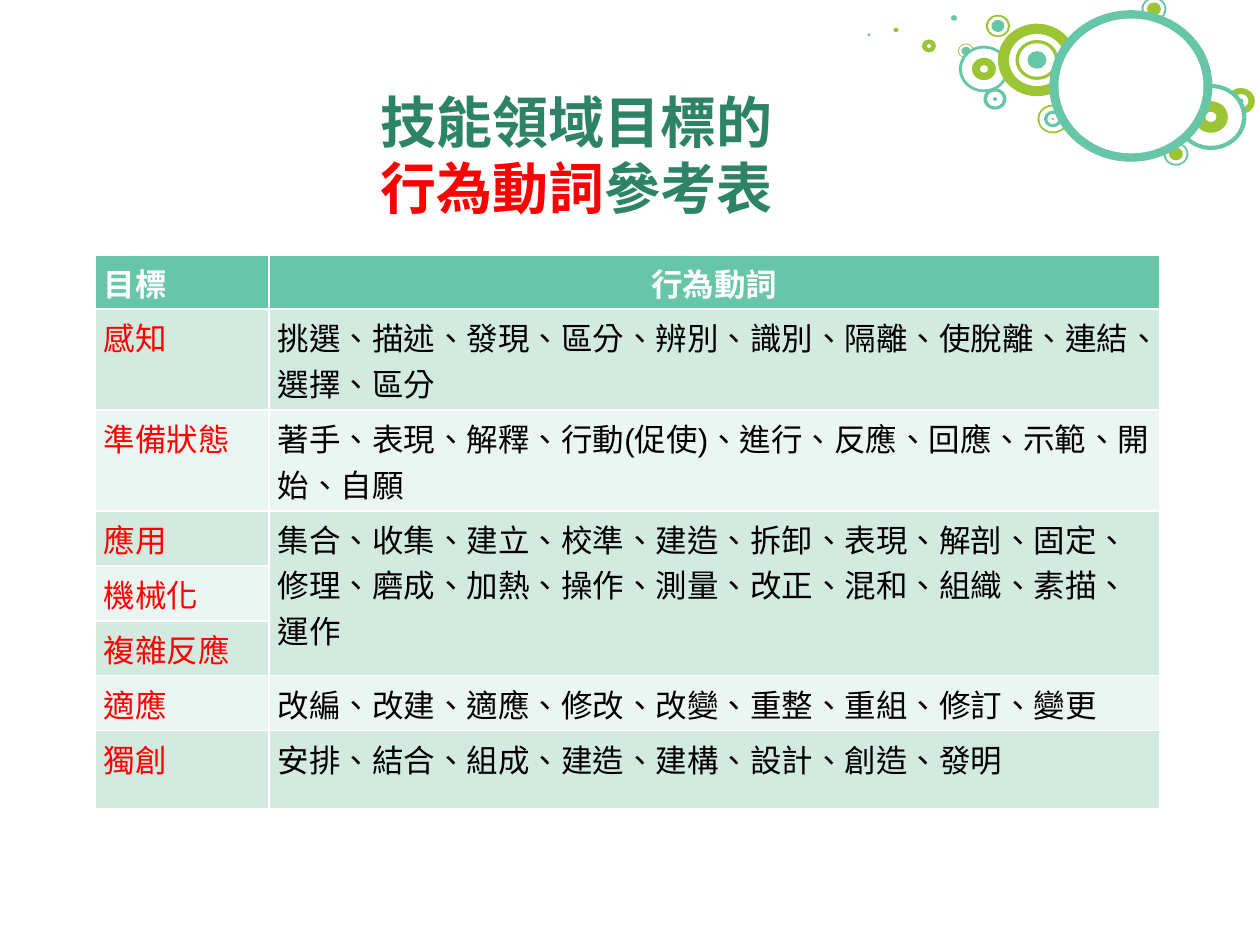
from pptx import Presentation
from pptx.dml.color import RGBColor
from pptx.enum.lang import MSO_LANGUAGE_ID
from pptx.enum.shapes import MSO_SHAPE
from pptx.enum.text import MSO_ANCHOR, PP_ALIGN
from pptx.oxml.ns import qn
from pptx.util import Pt

PX = 914400 // 126
OVAL = MSO_SHAPE.OVAL
CENTER, LEFT = PP_ALIGN.CENTER, PP_ALIGN.LEFT
MIDDLE = MSO_ANCHOR.MIDDLE
TAIWAN = MSO_LANGUAGE_ID.TRADITIONAL_CHINESE
CJK = "Noto Sans CJK SC"
COLORS = {
    "teal": "67C5A8", "lime": "9CC535", "white": "FFFFFF", "title": "2D8366",
    "red": "FF0000", "black": "000000", "dark": "D3EAE1", "light": "EBF5F1",
}

# Centre x, centre y, then the discs from the outside in: width, colour
RINGS = [
    (1154, 9, [(25, "teal"), (21, "white"), (14, "lime")]),
    (929, 46, [(14, "lime"), (4, "white")]),
    (954, 18, [(6, "teal")]),
    (896, 30, [(5, "lime")]),
    (869, 35, [(3, "teal")]),
    (966, 51, [(16, "lime"), (14, "white"), (9, "teal")]),
    (995, 99, [(23, "teal"), (16, "white"), (4, "teal")]),
    (984, 69, [(50, "teal"), (44, "white"), (24, "lime"), (8, "white")]),
    (1241, 101, [(28, "lime"), (15, "white"), (5, "teal")]),
    (1211, 117, [(71, "teal"), (62, "white"), (34, "lime"), (11, "white")]),
    (1053, 119, [(31, "lime"), (27, "white"), (18, "teal"), (11, "white"),
                 (2, "lime")]),
    (1037, 60, [(78, "lime"), (56, "white"), (43, "lime"), (36, "white"),
                (19, "teal")]),
    (1176, 154, [(25, "teal"), (21, "white"), (14, "lime")]),
    (998, 26, [(24, "lime"), (20, "white"), (13, "teal")]),
    (1131, 86, [(163, "teal"), (145, "white")]),
]
RATIO = 0.93

# Row height, goal, verbs (None joins the cell above)
ROWS = [
    (54, "目標", "行為動詞"),
    (101, "感知", "挑選、描述、發現、區分、辨別、識別、隔離、使脫離、連結、選擇、區分"),
    (101, "準備狀態", "著手、表現、解釋、行動(促使)、進行、反應、回應、示範、開始、自願"),
    (55, "應用", "集合、收集、建立、校準、建造、拆卸、表現、解剖、固定、"
                "修理、磨成、加熱、操作、測量、改正、混和、組織、素描、運作"),
    (55, "機械化", None),
    (55, "複雜反應", None),
    (55, "適應", "改編、改建、適應、修改、改變、重整、重組、修訂、變更"),
    (78, "獨創", "安排、結合、組成、建造、建構、設計、創造、發明"),
]


def px(*sizes):
    return [round(size * PX) for size in sizes]


def rgb(name):
    return RGBColor.from_string(COLORS[name])


def set_font(font, face, size, bold):
    """Set the face for Latin and for East Asian letters."""
    font.name, font.size, font.bold = face, Pt(size), bold
    east = font._element.makeelement(qn("a:ea"), {"typeface": CJK})
    font._element.find(qn("a:latin")).addnext(east)


def add_run(para, text):
    run = para.add_run()
    run.text = text
    run.font.language_id = TAIWAN
    return run


def add_ring(slide, x, y, discs):
    for wide, color in discs:
        high = wide * RATIO
        disc = slide.shapes.add_shape(
            OVAL, *px(x - wide / 2, y - high / 2, wide, high))
        disc.shadow.inherit = False
        disc.fill.solid()
        disc.fill.fore_color.rgb = rgb(color)
        disc.line.fill.background()


def add_title(slide):
    frame = slide.shapes.add_textbox(*px(115, 76, 924, 157)).text_frame
    frame.word_wrap = True
    frame.vertical_anchor = MIDDLE
    para = frame.paragraphs[0]
    para.alignment = CENTER
    para.line_spacing = Pt(38)
    for text, color in (("技能領域目標的\n", "title"), ("行為動詞", "red"),
                        ("參考表", "title")):
        line, *rest = text.split("\n")
        run = add_run(para, line)
        set_font(run.font, CJK, 32, True)
        run.font.color.rgb = rgb(color)
        if rest:
            para.add_line_break()


def fill_cell(cell, text, fill, color, bold, align):
    cell.fill.solid()
    cell.fill.fore_color.rgb = rgb(fill)
    cell.margin_left, cell.margin_top = px(9, 5)
    cell.margin_right, cell.margin_bottom = px(9, 5)
    if text is None:
        return
    para = cell.text_frame.paragraphs[0]
    add_run(para, text)
    para.alignment = align
    set_font(para.font, "Arial", 18, bold)
    para.font.color.rgb = rgb(color)


def add_grid(slide):
    total = sum(row[0] for row in ROWS)
    table = slide.shapes.add_table(
        len(ROWS), 2, *px(95, 255, 1065, total)).table
    table.columns[0].width, table.columns[1].width = px(174, 891)
    for i, (high, goal, verbs) in enumerate(ROWS):
        table.rows[i].height = px(high)[0]
        head = i == 0
        fill = "teal" if head else "dark" if i % 2 else "light"
        ink = ("white", "white") if head else ("red", "black")
        fill_cell(table.cell(i, 0), goal, fill, ink[0], head, LEFT)
        fill_cell(table.cell(i, 1), verbs, fill, ink[1], head,
                  CENTER if head else LEFT)
    table.cell(3, 1).merge(table.cell(5, 1))


def main():
    deck = Presentation()
    deck.slide_width, deck.slide_height = px(1260, 945)
    slide = deck.slides.add_slide(deck.slide_layouts[6])
    for ring in RINGS:
        add_ring(slide, *ring)
    add_title(slide)
    add_grid(slide)
    deck.save("out.pptx")


if __name__ == "__main__":
    main()
